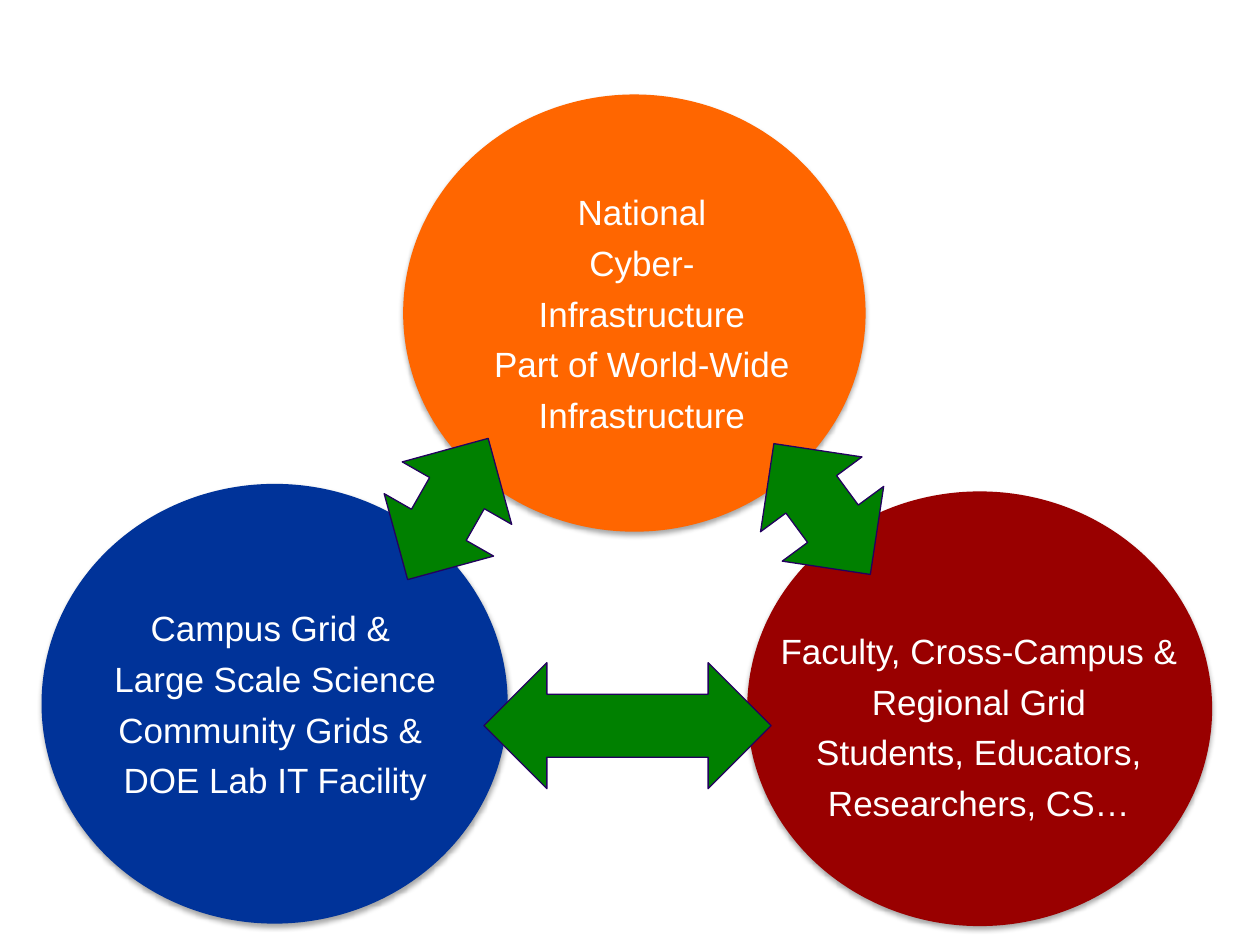
from dataclasses import dataclass

from lxml import etree
from pptx import Presentation
from pptx.dml.color import RGBColor
from pptx.enum.shapes import MSO_SHAPE
from pptx.enum.text import MSO_ANCHOR, PP_ALIGN
from pptx.oxml.ns import qn
from pptx.util import Inches, Pt

OVAL = MSO_SHAPE.OVAL
DOUBLE_ARROW = MSO_SHAPE.LEFT_RIGHT_ARROW
MIDDLE = MSO_ANCHOR.MIDDLE
CENTER = PP_ALIGN.CENTER


@dataclass(frozen=True)
class Theme:
    national: str = "FF6600"
    campus: str = "003399"
    faculty: str = "990000"
    arrow: str = "008000"
    arrow_line: str = "23005F"
    label: str = "FFFFFF"
    font: str = "Arial"
    label_size: float = 20
    label_gap: float = 5
    line_width: float = 0.75


THEME = Theme()

# circle box, colour, label box, label lines
COMMUNITIES = [
    ((3.2, 0.75, 3.67, 3.47), THEME.national, (3.81, 1.46, 2.57, 2.05),
     ["National", "Cyber-", "Infrastructure", "Part of World-Wide ",
      "Infrastructure"]),
    ((0.33, 3.84, 3.7, 3.49), THEME.campus, (0.8, 4.76, 2.77, 1.65),
     ["Campus Grid & ", "Large Scale Science ", "Community Grids & ",
      "DOE Lab IT Facility"]),
    ((5.93, 3.9, 3.69, 3.45), THEME.faculty, (6.08, 4.94, 3.38, 1.65),
     ["Faculty, Cross-Campus & ", "Regional Grid", "Students, Educators,",
      "Researchers, CS…"]),
]

# arrow box, rotation
LINKS = [
    ((2.91, 3.54, 1.29, 1), 299.7),
    ((5.88, 3.54, 1.29, 1), 233.6),
    ((3.84, 5.26, 2.28, 1), 0),
]


def inches(box):
    return [Inches(length) for length in box]


def add_soft_shadow(shape):
    """Give the shape a faint shadow straight below it."""
    shape.shadow.inherit = False
    effects = shape._element.spPr.find(qn("a:effectLst"))
    shadow = etree.SubElement(
        effects, qn("a:outerShdw"), blurRad=str(Pt(3.1)), dist=str(Pt(1.8)),
        dir="5400000", rotWithShape="0")
    black = etree.SubElement(shadow, qn("a:srgbClr"), val="000000")
    etree.SubElement(black, qn("a:alpha"), val="35000")


def add_circle(slide, box, color):
    circle = slide.shapes.add_shape(OVAL, *inches(box))
    circle.fill.solid()
    circle.fill.fore_color.rgb = RGBColor.from_string(color)
    circle.line.fill.background()
    add_soft_shadow(circle)


def add_label(slide, box, lines):
    frame = slide.shapes.add_textbox(*inches(box)).text_frame
    frame.word_wrap = False
    frame.vertical_anchor = MIDDLE
    frame.text = "\n".join(lines)
    for index, paragraph in enumerate(frame.paragraphs):
        paragraph.alignment = CENTER
        if index:
            paragraph.space_before = Pt(THEME.label_gap)
        for run in paragraph.runs:
            run.font.name = THEME.font
            run.font.size = Pt(THEME.label_size)
            run.font.color.rgb = RGBColor.from_string(THEME.label)


def add_link(slide, box, rotation):
    arrow = slide.shapes.add_shape(DOUBLE_ARROW, *inches(box))
    arrow.rotation = rotation
    arrow.shadow.inherit = False
    arrow.fill.solid()
    arrow.fill.fore_color.rgb = RGBColor.from_string(THEME.arrow)
    arrow.line.color.rgb = RGBColor.from_string(THEME.arrow_line)
    arrow.line.width = Pt(THEME.line_width)


def main():
    deck = Presentation()
    deck.slide_width, deck.slide_height = Inches(10), Inches(7.5)
    slide = deck.slides.add_slide(deck.slide_layouts[6])
    for circle_box, color, _, _ in COMMUNITIES:
        add_circle(slide, circle_box, color)
    for _, _, label_box, lines in COMMUNITIES:
        add_label(slide, label_box, lines)
    for box, rotation in LINKS:
        add_link(slide, box, rotation)
    deck.save("out.pptx")


if __name__ == "__main__":
    main()
